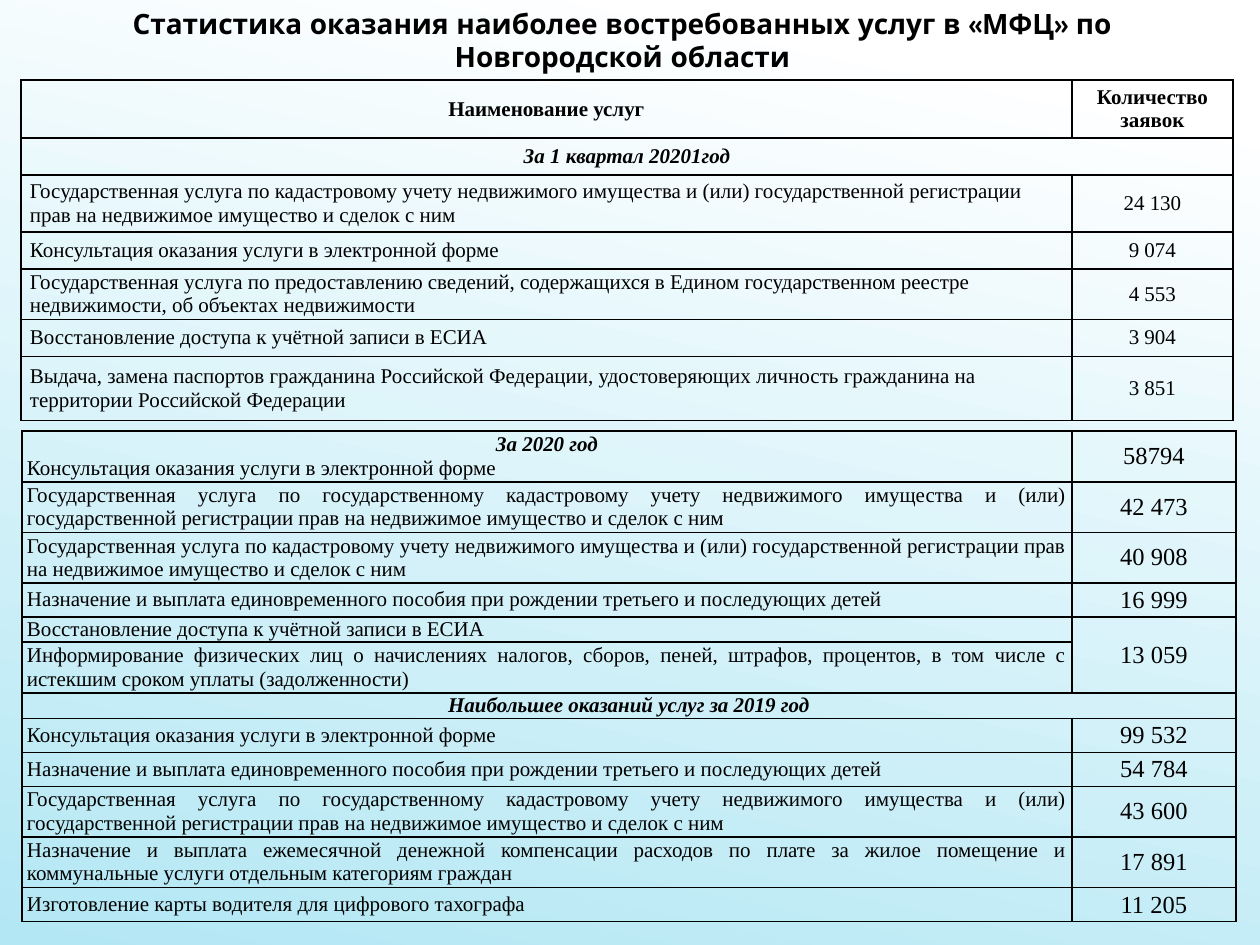
from lxml.etree import SubElement
from pptx import Presentation
from pptx.dml.color import RGBColor
from pptx.enum.text import MSO_ANCHOR as ANCHOR, MSO_AUTO_SIZE as AUTO, PP_ALIGN as ALIGN
from pptx.oxml.ns import qn
from pptx.util import Emu, Pt

COLORS = {"ink": "000000", "sky_top": "FFFFFF", "sky_bottom": "B3E7F4"}
HEADING = {"align": ALIGN.CENTER, "bold": True}
PERIOD = {**HEADING, "italic": True}
ACROSS, ABOVE = "across", "above"  # second-column marks: merge with the left or upper cell

# Services that appear in more than one period
CONSULT = "Консультация оказания услуги в электронной форме"
ACCESS = "Восстановление доступа к учётной записи в ЕСИА"
CADASTRE = ("Государственная услуга по {}кадастровому учету недвижимого имущества и (или) "
            "государственной регистрации прав на недвижимое имущество и сделок с ним")
STATE_CADASTRE = CADASTRE.format("государственному ")
PLAIN_CADASTRE = CADASTRE.format("")
CHILD = "Назначение и выплата единовременного пособия при рождении третьего и последующих детей"

# Row height, lines of the first cell (text, format), second cell
QUARTER_ROWS = [
    (58, [("Наименование услуг", HEADING)], "Количество заявок"),
    (37, [("За 1 квартал 20201год", PERIOD)], ACROSS),
    (57, [(PLAIN_CADASTRE, {})], "24 130"),
    (37, [(CONSULT, {})], "9 074"),
    (50, [("Государственная услуга по предоставлению сведений, содержащихся в Едином "
           "государственном реестре недвижимости, об объектах недвижимости", {})], "4 553"),
    (37, [(ACCESS, {})], "3 904"),
    (64, [("Выдача, замена паспортов гражданина Российской Федерации, удостоверяющих "
           "личность гражданина на территории Российской Федерации", {})], "3 851"),
]
YEAR_ROWS = [
    (51, [("За 2020 год", PERIOD), (CONSULT, {})], "58794"),
    (50, [(STATE_CADASTRE, {})], "42 473"),
    (50, [(PLAIN_CADASTRE, {})], "40 908"),
    (34, [(CHILD, {})], "16 999"),
    (25, [(ACCESS, {})], "13 059"),
    (51, [("Информирование физических лиц о начислениях налогов, сборов, пеней, штрафов, "
           "процентов, в том числе с истекшим сроком уплаты (задолженности)", {})], ABOVE),
    (25, [("Наибольшее оказаний услуг за 2019 год", PERIOD)], ACROSS),
    (34, [(CONSULT, {})], "99 532"),
    (34, [(CHILD, {})], "54 784"),
    (50, [(STATE_CADASTRE, {})], "43 600"),
    (51, [("Назначение и выплата ежемесячной денежной компенсации расходов по плате за жилое "
           "помещение и коммунальные услуги отдельным категориям граждан", {})], "17 891"),
    (34, [("Изготовление карты водителя для цифрового тахографа", {})], "11 205"),
]


def px(n):
    return Emu(round(n * 914400 / 126))


def rgb(name):
    return RGBColor.from_string(COLORS[name])


def write(p, text, size=12, font="Times New Roman", align=ALIGN.LEFT, bold=False, italic=False):
    p.alignment = align
    r = p.add_run()
    r.text = text
    f = r.font
    f.size, f.name, f.bold, f.italic = Pt(size), font, bold, italic
    f.color.rgb = rgb("ink")


class Deck:
    def __init__(self, width, height):
        self.prs = Presentation()
        self.prs.slide_width, self.prs.slide_height = px(width), px(height)
        self.s = self.prs.slides.add_slide(self.prs.slide_layouts[5])

    def background(self):
        fill = self.s.background.fill
        fill.gradient()
        fill.gradient_angle = 258
        for stop, pos, name in zip(fill.gradient_stops, (0.1, 1), ("sky_top", "sky_bottom")):
            stop.position, stop.color.rgb = pos, rgb(name)

    def title(self, text, x, y, w, h):
        sp = self.s.shapes.title
        sp.left, sp.top, sp.width, sp.height = map(px, (x, y, w, h))
        tf = sp.text_frame
        tf.word_wrap, tf.vertical_anchor = True, ANCHOR.TOP
        tf.auto_size = AUTO.SHAPE_TO_FIT_TEXT
        write(tf.paragraphs[0], text, size=16, font="Quicksand", **HEADING)

    def cell(self, cell, inset):
        cell.vertical_anchor = ANCHOR.MIDDLE
        cell.margin_left = cell.margin_right = px(inset)
        cell.margin_top = cell.margin_bottom = 0
        tcPr = cell._tc.get_or_add_tcPr()
        for side in ("a:lnL", "a:lnR", "a:lnT", "a:lnB"):
            ln = SubElement(tcPr, qn(side), w=str(Pt(1)))
            SubElement(SubElement(ln, qn("a:solidFill")), qn("a:srgbClr"), val=COLORS["ink"])
        cell.fill.background()

    def table(self, rows, x, y, cols, inset, align, count_size):
        height = sum(row[0] for row in rows)
        t = self.s.shapes.add_table(len(rows), 2, px(x), px(y), px(sum(cols)), px(height)).table
        t.first_row = t.horz_banding = False
        for col, w in zip(t.columns, cols):
            col.width = px(w)
        for i, (h, lines, count) in enumerate(rows):
            t.rows[i].height = px(h)
            service, number = t.cell(i, 0), t.cell(i, 1)
            self.cell(service, inset)
            self.cell(number, inset)
            tf = service.text_frame
            for j, (text, style) in enumerate(lines):
                p = tf.add_paragraph() if j else tf.paragraphs[0]
                write(p, text, **{"align": align, **style})
            if count == ACROSS:
                service.merge(number)
            elif count == ABOVE:
                t.cell(i - 1, 1).merge(number)
            else:
                # The count is bold only beside a column heading
                bold = lines[0][1] is HEADING
                write(number.text_frame.paragraphs[0], count, size=count_size,
                      align=ALIGN.CENTER, bold=bold)


def main():
    deck = Deck(1260, 945)
    deck.background()
    deck.title("Статистика оказания наиболее востребованных услуг в «МФЦ» по Новгородской области",
               23, 0, 1199, 80)
    # First quarter
    deck.table(QUARTER_ROWS, 21, 80, (1051, 161), inset=9, align=ALIGN.LEFT, count_size=12)
    # Previous years
    deck.table(YEAR_ROWS, 22, 431, (1050, 164), inset=5, align=ALIGN.JUSTIFY, count_size=14)
    deck.prs.save("out.pptx")


if __name__ == "__main__":
    main()
